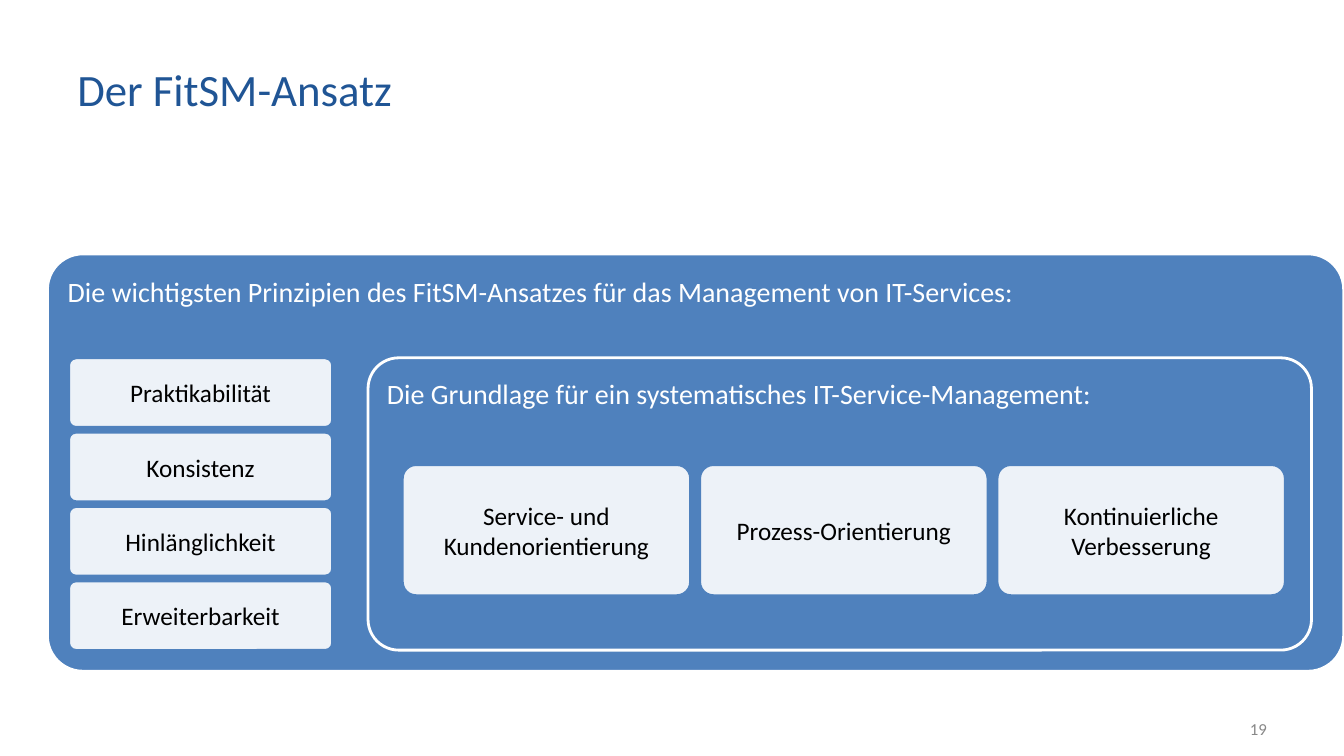
from dataclasses import dataclass

from lxml.etree import SubElement
from pptx import Presentation
from pptx.dml.color import RGBColor as Rgb
from pptx.enum.shapes import MSO_SHAPE as Shape
from pptx.enum.text import MSO_ANCHOR as Anchor, PP_ALIGN as Align
from pptx.oxml.ns import qn
from pptx.util import Pt


@dataclass(frozen=True)
class Theme:
    font: str = "Calibri"
    title: Rgb = Rgb(0x20, 0x55, 0x95)
    blue: Rgb = Rgb(0x4F, 0x81, 0xBD)
    white: Rgb = Rgb(0xFF, 0xFF, 0xFF)
    black: Rgb = Rgb(0, 0, 0)
    grey: Rgb = Rgb(0x88, 0x88, 0x88)
    title_size: int = 32
    heading_size: int = 20
    card_size: int = 18
    number_size: int = 12
    line_width: int = 2
    card_opacity: int = 90


THEME = Theme()
PRINCIPLES = ["Praktikabilität", "Konsistenz", "Hinlänglichkeit", "Erweiterbarkeit"]
FOUNDATIONS = ["Service- und Kundenorientierung", "Prozess-Orientierung",
               "Kontinuierliche Verbesserung"]


def write(shape, text, size, color, align=Align.LEFT, anchor=Anchor.MIDDLE, inset=(7.2, 3.6)):
    frame = shape.text_frame
    frame.word_wrap = True
    frame.vertical_anchor = anchor
    frame.margin_left = frame.margin_right = Pt(inset[0])
    frame.margin_top = frame.margin_bottom = Pt(inset[1])
    frame.text = text
    para = frame.paragraphs[0]
    para.alignment = align
    font = para.runs[0].font
    font.name, font.size, font.color.rgb = THEME.font, Pt(size), color


def add_rounded(page, box, radius, fill, line):
    shape = page.shapes.add_shape(Shape.ROUNDED_RECTANGLE, *map(Pt, box))
    shape.adjustments[0] = radius
    shape.shadow.inherit = False
    shape.fill.solid()
    shape.fill.fore_color.rgb = fill
    shape.line.color.rgb = line
    shape.line.width = Pt(THEME.line_width)
    return shape


def add_panel(page, box, radius, heading):
    panel = add_rounded(page, box, radius, THEME.blue, THEME.white)
    write(panel, heading, THEME.heading_size, THEME.white, anchor=Anchor.TOP, inset=(7.2, 7.2))


def add_card(page, box, label):
    card = add_rounded(page, box, 0.105, THEME.white, THEME.blue)
    color = card.fill._xPr.find(qn("a:solidFill"))[0]
    SubElement(color, qn("a:alpha"), val=str(THEME.card_opacity * 1000))
    write(card, label, THEME.card_size, THEME.black, Align.CENTER, inset=(7.2, 7.2))


def add_principles(page, box):
    """Stack the principle cards evenly from top to bottom."""
    left, top, width, height = box
    gap = 3.4
    card_height = (height - gap * (len(PRINCIPLES) - 1)) / len(PRINCIPLES)
    for row, label in enumerate(PRINCIPLES):
        add_card(page, (left, top + row * (card_height + gap), width, card_height), label)


def add_foundation(page, box):
    """Inner panel with a row of equal cards."""
    left, top, width, height = box
    add_panel(page, box, 0.105, "Die Grundlage für ein systematisches IT-Service-Management:")
    card_width, pitch = 205.9, 212.4
    for column, label in enumerate(FOUNDATIONS):
        add_card(page, (left + 24.5 + column * pitch, top + 76.3, card_width, 93.6), label)


def add_approach(page, box):
    """Outer panel: principles on the left, foundation on the right."""
    left, top, width, height = box
    add_panel(page, box, 0.085,
              "Die wichtigsten Prinzipien des FitSM-Ansatzes für das Management von IT-Services:")
    add_principles(page, (left + 15.1, top + 74.2, 188.6, 209))
    add_foundation(page, (left + 229, top + 74.2, 673.9, 208.8))


def add_title(page, box):
    title = page.shapes.title
    title.left, title.top, title.width, title.height = map(Pt, box)
    write(title, "Der FitSM-Ansatz", THEME.title_size, THEME.title)


def add_page_number(page, box):
    number = page.shapes.add_textbox(*map(Pt, box))
    write(number, "19", THEME.number_size, THEME.grey, Align.RIGHT)


def main():
    deck = Presentation()
    deck.slide_width, deck.slide_height = Pt(960), Pt(540)
    page = deck.slides.add_slide(deck.slide_layouts[5])
    add_title(page, (48, 21.6, 713.5, 82.8))
    add_page_number(page, (688, 506, 224, 28.8))
    add_approach(page, (33.9, 181.4, 925.9, 298.1))
    deck.save("out.pptx")


if __name__ == "__main__":
    main()
